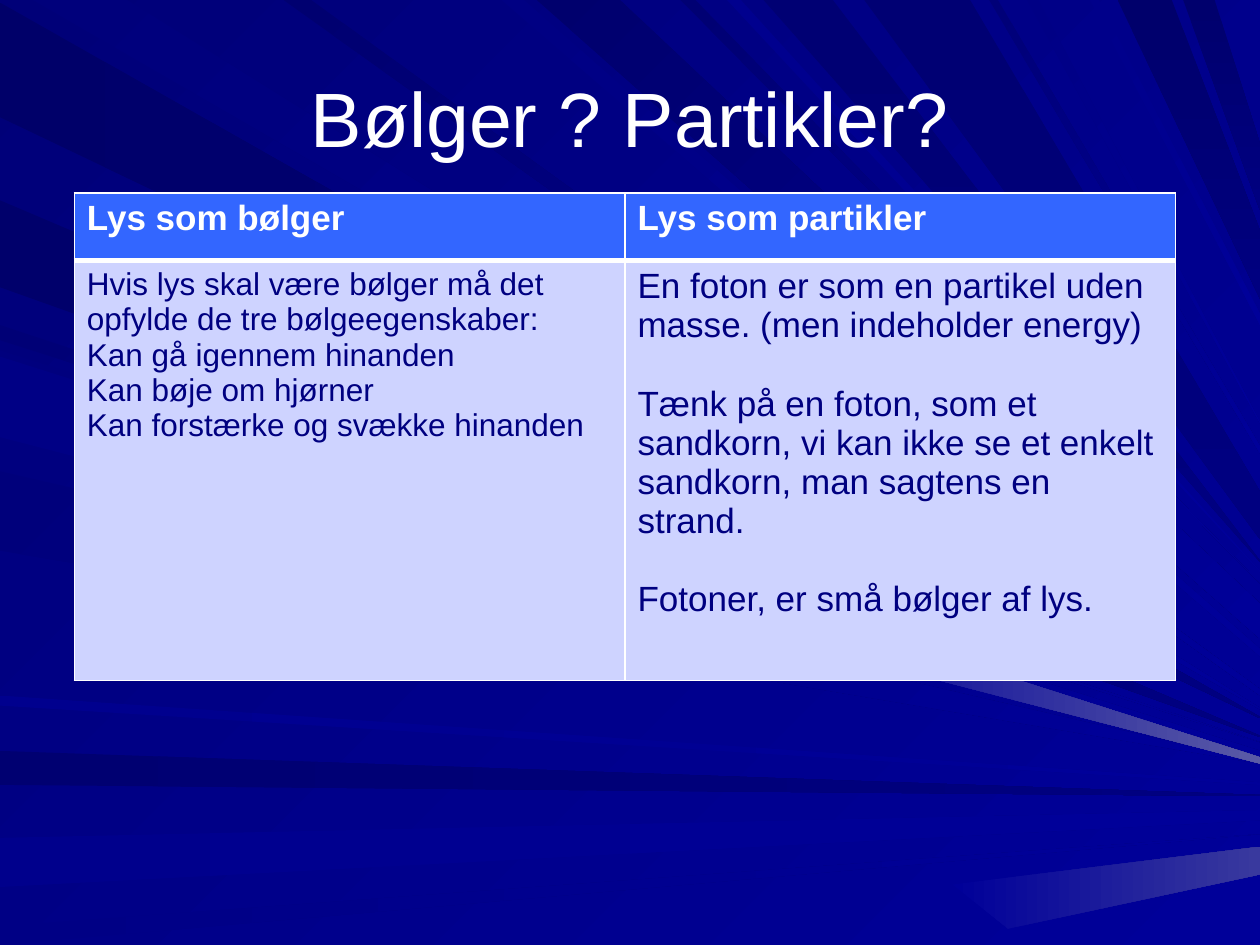
import pptx
import pptx.dml.color
import pptx.enum.text
import pptx.oxml
import pptx.oxml.ns
import pptx.util

Inches = pptx.util.Inches
Pt = pptx.util.Pt

WHITE, NAVY, DEEP = "FFFFFF", "000080", "000099"
ANGLES = {"flat": 0, "slant": 45, "fall": 90}

RAYS = [
    ("left", (0.02, 0.93), (5.69, 5.7), "000069", NAVY, "flat"),
    ("top", (0.26, 1.01), (5.62, 5.63), "00007B", DEEP, "slant"),
    ("left", (5.96, 6.23), (6.31, 6.32), "000071", NAVY, "flat"),
    ("left", (6.65, 7.04), (6.43, 6.51), "00008C", DEEP, "flat"),
    ("left", (7.35, 7.5), (6.62, 6.62), "000085", DEEP, "flat"),
    ("left", (2.58, 2.7), (5.89, 5.89), "000076", DEEP, "slant"),
    ("left", (1.59, 2.28), (5.84, 5.85), "00006B", NAVY, "flat"),
    ("top", (3.98, 4.16), (5.15, 5.21), "000083", DEEP, "slant"),
    ("top", (4.26, 4.92), (4.79, 5.07), "00006D", DEEP, "slant"),
    ("top", (5.4, 5.52), (4.63, 4.63), "000073", DEEP, "slant"),
    ("top", (6.06, 6.61), (4.45, 4.46), "000073", NAVY, "fall"),
    ("top", (8.87, 9.3), (1.83, 2.37), "00006B", NAVY, "fall"),
    ("top", (9.39, 9.64), (1.14, 1.67), "00006D", NAVY, "fall"),
    ("left", (2.78, 3.42), (5.96, 6.02), "00007E", DEEP, "slant"),
    ("left", (3.74, 4.37), (6.05, 6.06), "00007B", DEEP, "slant"),
    ("left", (5.52, 5.6), (6.21, 6.23), "00008E", DEEP, "flat"),
    ("top", (2.25, 2.47), (5.47, 5.52), "000070", DEEP, "slant"),
    ("top", (5.77, 5.88), (4.53, 4.54), "00008E", DEEP, "slant"),
    ("top", (6.86, 7.7), (3.9, 4.28), "000073", NAVY, "fall"),
    ("top", (7.85, 7.92), (3.54, 3.6), "000078", DEEP, "slant"),
    ("top", (8.15, 8.24), (3.35, 3.36), "000085", DEEP, "slant"),
    ("top", (8.65, 8.72), (2.49, 2.58), "00008A", DEEP, "slant"),
    ("left", (2.83, 3.47), (6.01, 6.06), "000085", DEEP, "flat"),
]
GLINTS = [
    ([(7.56, 7.02), (10, 6.72), (10, 6.94), (8, 7.37)], "39399E"),
    ([(6.37, 4.85), (10, 6.01), (10, 6.06), (6.33, 5.11)], "5A5AA6"),
]

HEADS = ["Lys som bølger", "Lys som partikler"]
WAVES = [
    "Hvis lys skal være bølger må det opfylde de tre bølgeegenskaber:",
    "Kan gå igennem hinanden",
    "Kan bøje om hjørner",
    "Kan forstærke og svække hinanden",
]
GRAINS = [
    "En foton er som en partikel uden masse. (men indeholder energy)",
    "Tænk på en foton, som et sandkorn, vi kan ikke se et enkelt sandkorn, man sagtens en strand.",
    "Fotoner, er små bølger af lys.",
]


def rgb(code):
    return pptx.dml.color.RGBColor.from_string(code)


def apply(thing, form):
    for key, val in form.items():
        setattr(thing, key, val)


def style(font, size, code, bold=False):
    apply(font, {"name": "Arial", "size": Pt(size), "bold": bold})
    font.color.rgb = rgb(code)


def shade(fill, start, end, angle):
    fill.gradient()
    fill.gradient_angle = -angle % 360
    for stop, code, pos in zip(fill.gradient_stops, (start, end), (0, 1)):
        stop.color.rgb = rgb(code)
        stop.position = pos


def add_ray(slide, points, start, end, angle):
    spots = [(Inches(x), Inches(y)) for x, y in points]
    build = slide.shapes.build_freeform(*spots[0], scale=1)
    build.add_line_segments(spots[1:], close=True)
    ray = build.convert_to_shape()
    ray.shadow.inherit = False
    ray.line.fill.background()
    shade(ray.fill, start, end, angle)


def add_rays(slide, left, top, width):
    right = left + width
    for side, (near, far), (high, low), start, end, lean in RAYS:
        if side == "top":
            base = [(left + near, top), (left + far, top)]
        else:
            base = [(left, top + far), (left, top + near)]
        tip = [(right, top + high), (right, top + low)]
        add_ray(slide, base + tip, start, end, ANGLES[lean])
    for points, end in GLINTS:
        add_ray(slide, [(left + x, top + y) for x, y in points], DEEP, end, 0)


def add_title(slide, left, top, width, height):
    title = slide.shapes.title
    slide.shapes._spTree.append(title._element)
    apply(title, {"left": Inches(left), "top": Inches(top),
                  "width": Inches(width), "height": Inches(height)})
    frame = title.text_frame
    apply(frame, {"text": "Bølger ? Partikler?", "word_wrap": True,
                  "vertical_anchor": pptx.enum.text.MSO_ANCHOR.MIDDLE})
    line = frame.paragraphs[0]
    line.alignment = pptx.enum.text.PP_ALIGN.CENTER
    style(line.font, 44, WHITE)


def edge(cell, sides):
    props = cell._tc.get_or_add_tcPr()
    for side, width in sides.items():
        props.append(pptx.oxml.parse_xml(
            f'<a:ln{side} {pptx.oxml.ns.nsdecls("a")} w="{Pt(width)}"><a:solidFill>'
            f'<a:srgbClr val="{WHITE}"/></a:solidFill></a:ln{side}>'))


def fill_cell(cell, lines, size, code, back, bold=False, gap=0):
    frame = cell.text_frame
    for num, text in enumerate(lines):
        para = frame.add_paragraph() if num else frame.paragraphs[0]
        run = para.add_run()
        run.text = text
        style(run.font, size, code, bold)
        if num and gap:
            para.space_before = Pt(gap)
    cell.fill.solid()
    cell.fill.fore_color.rgb = rgb(back)


def add_grid(slide, left, top, width, heights):
    frame = slide.shapes.add_table(2, 2, Inches(left), Inches(top),
                                   Inches(width), Inches(sum(heights)))
    table = frame.table
    apply(table, {"first_row": True, "horz_banding": False})
    for row, height in zip(table.rows, heights):
        row.height = Inches(height)
    for col, (head, body, size, gap) in enumerate(
            zip(HEADS, (WAVES, GRAINS), (18, 20), (0, 22.4))):
        top_cell, low_cell = table.cell(0, col), table.cell(1, col)
        edge(top_cell, {"L": 1, "R": 1, "T": 1, "B": 3})
        edge(low_cell, {"L": 1, "R": 1, "T": 3, "B": 1})
        fill_cell(top_cell, [head], 20, WHITE, "3366FF", bold=True)
        fill_cell(low_cell, body, size, NAVY, "CED3FF", gap=gap)


def main():
    deck = pptx.Presentation()
    apply(deck, {"slide_width": Inches(10), "slide_height": Inches(7.5)})
    slide = deck.slides.add_slide(deck.slide_layouts[5])
    shade(slide.background.fill, "000078", DEEP, 45)
    add_rays(slide, 0, 0, 10)
    add_title(slide, 0.5, 0.3, 9, 1.25)
    add_grid(slide, 0.59, 1.53, 8.74, (0.54, 3.33))
    deck.save("out.pptx")


if __name__ == "__main__":
    main()
